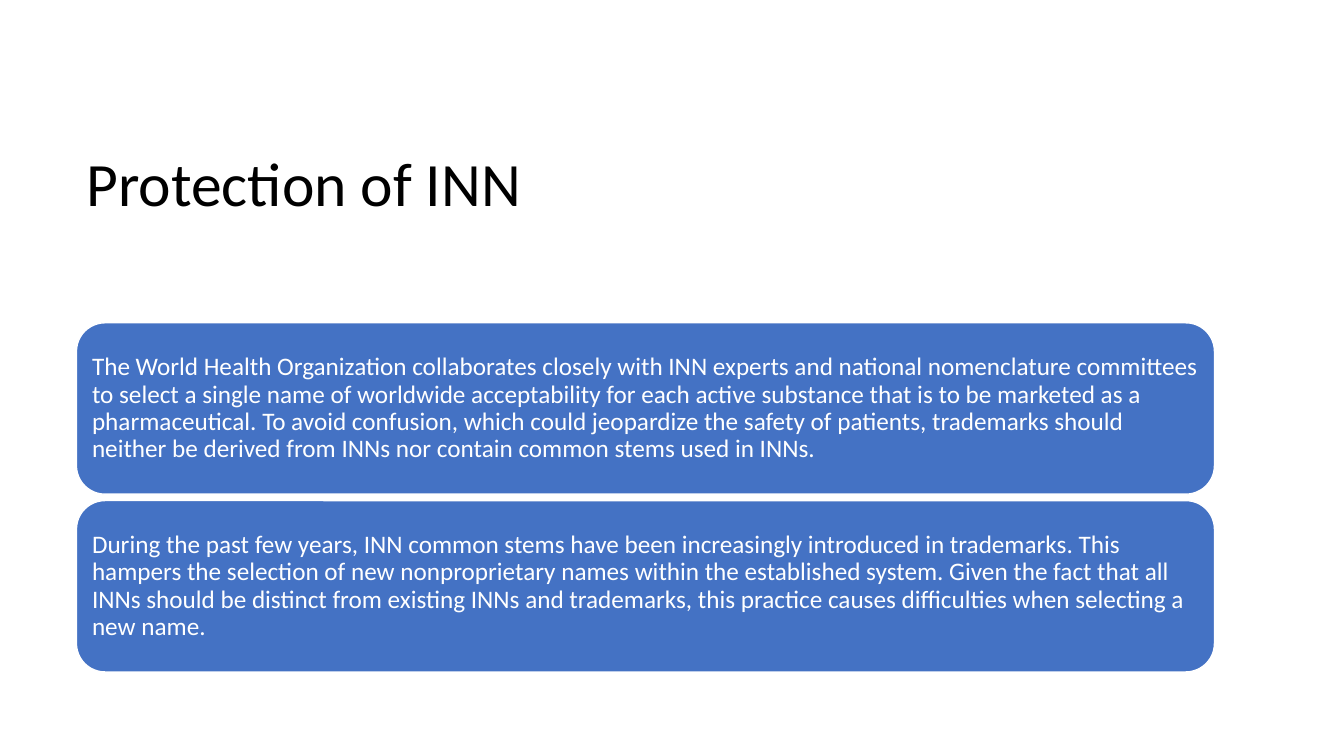
import pptx
import pptx.util
import pptx.dml.color
import pptx.enum.shapes
import pptx.enum.text

Pt = pptx.util.Pt

TITLE = "Protection of INN"
STATEMENTS = [
    "The World Health Organization collaborates closely with INN experts and national nomenclature committees to select a single name of worldwide acceptability for each active substance that is to be marketed as a pharmaceutical. To avoid confusion, which could jeopardize the safety of patients, trademarks should neither be derived from INNs nor contain common stems used in INNs. ",
    "During the past few years, INN common stems have been increasingly introduced in trademarks. This hampers the selection of new nonproprietary names within the established system. Given the fact that all INNs should be distinct from existing INNs and trademarks, this practice causes difficulties when selecting a new name. ",
]
COLORS = {"title": "000000", "panel": "4472C4", "light": "FFFFFF"}
FONT = "Calibri"

LEFT, WIDTH = 54.6, 812.9
TITLE_TOP, TITLE_HEIGHT = 57.2, 152
PANEL_TOP, PANEL_HEIGHT, PANEL_GAP = 230.6, 122.4, 4.6
PANEL_INSET, PANEL_RIGHT_INSET = 5.2, 3.6


def color(name):
    return pptx.dml.color.RGBColor.from_string(COLORS[name])


def write(shape, text, size, color_name):
    frame = shape.text_frame
    frame.word_wrap = True
    frame.vertical_anchor = pptx.enum.text.MSO_ANCHOR.MIDDLE
    frame.text = text
    paragraph = frame.paragraphs[0]
    paragraph.alignment = pptx.enum.text.PP_ALIGN.LEFT
    paragraph.line_spacing = 0.9
    font = paragraph.runs[0].font
    font.name = FONT
    font.size = Pt(size)
    font.color.rgb = color(color_name)
    return frame


def add_panel(slide, index, text):
    top = PANEL_TOP + index * (PANEL_HEIGHT + PANEL_GAP)
    panel = slide.shapes.add_shape(
        pptx.enum.shapes.MSO_SHAPE.ROUNDED_RECTANGLE,
        Pt(LEFT), Pt(top), Pt(WIDTH), Pt(PANEL_HEIGHT))
    panel.shadow.inherit = False
    panel.fill.solid()
    panel.fill.fore_color.rgb = color("panel")
    panel.line.color.rgb = color("light")
    panel.line.width = Pt(1)
    frame = write(panel, text, 18, "light")
    frame.margin_left = Pt(PANEL_INSET)
    frame.margin_right = Pt(PANEL_RIGHT_INSET)
    frame.margin_top = frame.margin_bottom = Pt(PANEL_INSET)
    frame.paragraphs[0].space_after = Pt(6.3)


def main():
    presentation = pptx.Presentation()
    presentation.slide_width = Pt(960)
    presentation.slide_height = Pt(540)
    slide = presentation.slides.add_slide(presentation.slide_layouts[6])
    title = slide.shapes.add_textbox(
        Pt(LEFT), Pt(TITLE_TOP), Pt(WIDTH), Pt(TITLE_HEIGHT))
    write(title, TITLE, 44, "title")
    for index, text in enumerate(STATEMENTS):
        add_panel(slide, index, text)
    presentation.save("out.pptx")


if __name__ == "__main__":
    main()
